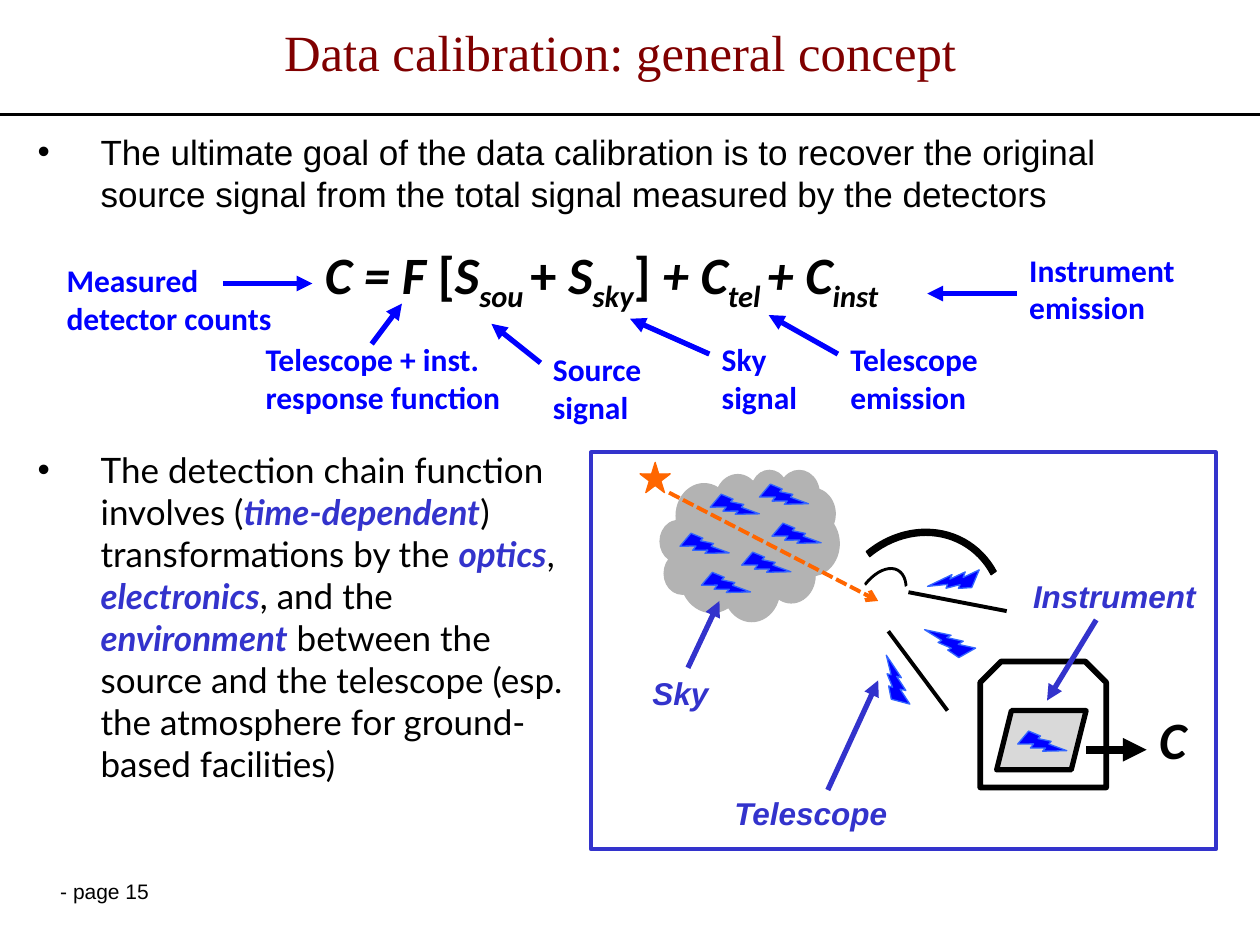
from lxml import etree
from pptx import Presentation
from pptx import util as u
from pptx.dml.color import RGBColor
from pptx.enum import dml, shapes, text
from pptx.oxml.ns import qn

COLOURS = {
    "ink": "000000", "title": "800000", "label": "0000FF", "accent": "3333CC",
    "ray": "FF6600", "cloud": "B3B3B3", "bolt_edge": "3366FF", "detector": "D9D9D9",
}
BODY = {"size": 20, "name": "Lato", "color": "ink"}
LABEL = {"size": 18, "name": "Calibri", "color": "label", "bold": True}
PART = {"size": 18, "name": "Arial", "color": "accent", "bold": True, "italic": True}
SYMBOL = {"size": 30, "name": "Calibri", "color": "ink", "bold": True, "italic": True}
STRESS = {"color": "accent", "bold": True, "italic": True}
UPRIGHT = {"italic": False}
SUB = {"baseline": -25000}
SHAPE = shapes.MSO_SHAPE


def rgb(name):
    return RGBColor.from_string(COLOURS[name])


class Board:
    """Draws on one slide, measured on a grid of 10 columns by 7.5 rows."""

    def __init__(self, deck):
        self.column = deck.slide_width / 10
        self.row = deck.slide_height / 7.5
        self.page = deck.slides.add_slide(deck.slide_layouts[6])

    def place(self, left, top, width, height):
        return [round(left * self.column), round(top * self.row),
                round(width * self.column), round(height * self.row)]

    def style(self, span, formats):
        for key, value in formats.items():
            if key == "color":
                span.font.color.rgb = rgb(value)
            elif key == "baseline":
                span._r.get_or_add_rPr().set("baseline", str(value))
            else:
                setattr(span.font, key, u.Pt(value) if key == "size" else value)

    def label(self, at, spans, base, align=None, anchor=text.MSO_ANCHOR.TOP):
        """Add a text box from spans, each a string or a (string, changes) pair."""
        box = self.page.shapes.add_textbox(*self.place(*at))
        box.text_frame.word_wrap = True
        box.text_frame.vertical_anchor = anchor
        para = box.text_frame.paragraphs[0]
        para.alignment = align
        for item in spans:
            words, changes = (item, {}) if isinstance(item, str) else item
            span = para.add_run()
            span.text = words
            self.style(span, {**base, **changes})
        return box

    def bullet(self, at, spans, base):
        para = self.label(at, spans, base).text_frame.paragraphs[0]
        para.line_spacing = u.Pt(24)
        props = para._p.get_or_add_pPr()
        indent = round(self.column / 2)
        props.set("marL", str(indent))
        props.set("indent", str(-indent))
        etree.SubElement(props, qn("a:buFont")).set("typeface", "Arial")
        etree.SubElement(props, qn("a:buChar")).set("char", "•")

    def shape(self, kind, at, fill, edge, weight=0.75, turn=0, adjust=(), flip=False):
        item = self.page.shapes.add_shape(kind, *self.place(*at))
        item.shadow.inherit = False
        item.rotation = turn
        for index, value in enumerate(adjust):
            item.adjustments[index] = value
        if fill:
            item.fill.solid()
            item.fill.fore_color.rgb = rgb(fill)
        else:
            item.fill.background()
        item.line.color.rgb = rgb(edge)
        item.line.width = u.Pt(weight)
        if flip:
            frame = item._element.spPr.find(qn("a:xfrm"))
            for side in ("flipH", "flipV"):
                frame.set(side, "1")

    def bolt(self, at, turn, flip=False):
        self.shape(SHAPE.LIGHTNING_BOLT, at, "label", "bolt_edge", turn=turn, flip=flip)

    def mirror(self, at):
        self.shape(SHAPE.BLOCK_ARC, at, "ink", "ink", turn=119.2,
                   adjust=(116.57 * 0.6, 206.46 * 0.6, 0.035))

    def line(self, start, end, colour, weight, head=None, dash=None):
        link = self.page.shapes.add_connector(
            shapes.MSO_CONNECTOR.STRAIGHT, *self.place(*start, *end))
        link.line.color.rgb = rgb(colour)
        link.line.width = u.Pt(weight)
        if dash:
            link.line.dash_style = dash
        if head:
            outline = link._element.spPr.find(qn("a:ln"))
            etree.SubElement(outline, qn("a:tailEnd")).set("type", head)
        etree.SubElement(link._element.spPr, qn("a:effectLst"))

    def arrow(self, start, end, colour, weight=3):
        self.line(start, end, colour, weight, "triangle")


def draw_text(board):
    board.line((0, 0.91), (10, 0.91), "ink", 1.5)
    board.label((0.38, 6.92, 1, 0.35), ["- page 15"],
                {"size": 12, "name": "Arial", "color": "ink"})
    board.label((0.83, 0.05, 8.19, 0.71), ["Data calibration: general concept"],
                {"size": 29, "name": "Times New Roman", "color": "title"},
                text.PP_ALIGN.CENTER, text.MSO_ANCHOR.MIDDLE)
    board.bullet((0.2, 0.99, 9.29, 1.1), [
        "The ultimate goal of the data calibration is to recover the original "
        "source signal from the total signal measured by the detectors",
    ], {**BODY, "name": "Arial"})
    board.bullet((0.2, 3.51, 4.49, 3.23), [
        "The detection chain function involves (", ("time-dependent", STRESS),
        ") transformations by the ", ("optics", STRESS), ", ",
        ("electronics", STRESS), ", and the ", ("environment", STRESS),
        " between the source and the telescope (esp. the atmosphere for "
        "ground-based facilities)",
    ], BODY)


def draw_formula(board):
    board.label((2.48, 1.87, 5.04, 1.01), [
        "C = F ", ("[", UPRIGHT), "S", ("sou ", SUB), ("+ ", UPRIGHT), "S",
        ("sky", SUB), ("]", UPRIGHT), " + C", ("tel ", SUB), "+ C", ("inst", SUB),
    ], SYMBOL)
    terms = [
        ("Instrument emission", (8.07, 1.94), 1.65, (8.07, 2.33), (7.36, 2.33)),
        ("Telescope emission", (6.65, 2.65), 1.49, (6.65, 2.81), (6.1, 2.5)),
        ("Measured detector counts", (0.43, 2.02), 2.13, (1.77, 2.25), (2.48, 2.25)),
        ("Sky signal", (5.63, 2.65), 1.1, (5.63, 2.81), (5, 2.53)),
        ("Telescope + inst. response function", (2.01, 2.65), 2.13,
         (2.95, 2.73), (3.19, 2.41)),
        ("Source signal", (4.29, 2.73), 1.1, (4.29, 2.88), (3.9, 2.57)),
    ]
    for words, corner, width, start, end in terms:
        board.label((*corner, width, 0.71), [words], LABEL)
        board.arrow(start, end, "label")


def draw_sky(board):
    board.shape(SHAPE.RECTANGLE, (4.69, 3.59, 4.96, 3.15), None, "accent", 2.25)
    board.shape(SHAPE.STAR_5_POINT, (5.08, 3.67, 0.24, 0.24), "ray", "ray")
    board.shape(SHAPE.CLOUD_CALLOUT, (5.24, 3.73, 1.42, 1.2), "cloud", "cloud",
                adjust=(-0.14, 0.16))
    for corner in [(5.42, 4.2), (6.05, 3.81), (6.15, 4.12), (5.91, 4.35),
                   (5.66, 3.89), (5.59, 4.51)]:
        board.bolt((*corner, 0.32, 0.28), 332.1)
    board.label((5.08, 5.3, 0.76, 0.41), ["Sky"], PART)
    board.arrow((5.46, 5.3), (5.71, 4.77), "accent")


def draw_telescope(board):
    board.mirror((6.49, 4.27, 1.57, 1.39))
    board.mirror((6.66, 4.61, 0.63, 0.37))
    board.line((7.21, 4.7), (7.99, 4.85), "ink", 2.25)
    board.line((7.05, 5.01), (7.52, 5.64), "ink", 2.25)
    board.line((5.31, 3.91), (6.97, 4.77), "ray", 2.25, "arrow",
               dml.MSO_LINE.SQUARE_DOT)
    for corner, turn in [((7.4, 4.47), 311.4), ((6.93, 5.28), 33.4), ((7.36, 4.96), 349)]:
        board.bolt((*corner, 0.37, 0.27), turn, flip=True)
    board.label((5.73, 6.25, 1.79, 0.4), ["Telescope"], PART)
    board.arrow((6.57, 6.27), (6.97, 5.4), "accent")


def draw_instrument(board):
    board.shape(SHAPE.SNIP_2_SAME_RECTANGLE, (7.78, 5.25, 1, 1), None, "ink", 3.25)
    board.label((8.1, 4.53, 1.79, 0.4), ["Instrument"], PART)
    board.arrow((8.7, 4.92), (8.31, 5.56), "accent")
    board.shape(SHAPE.PARALLELOGRAM, (7.91, 5.64, 0.71, 0.47), "detector", "ink", 3)
    board.arrow((8.62, 5.95), (9.1, 5.95), "ink", 4.5)
    board.label((9.1, 5.56, 0.61, 0.63), ["C"], SYMBOL)
    board.bolt((8.1, 5.77, 0.32, 0.28), 332.1)


def main():
    deck = Presentation()
    deck.slide_width, deck.slide_height = u.Inches(10), u.Inches(7.5)
    board = Board(deck)
    for draw in (draw_text, draw_formula, draw_sky, draw_telescope, draw_instrument):
        draw(board)
    deck.save("out.pptx")


if __name__ == "__main__":
    main()
